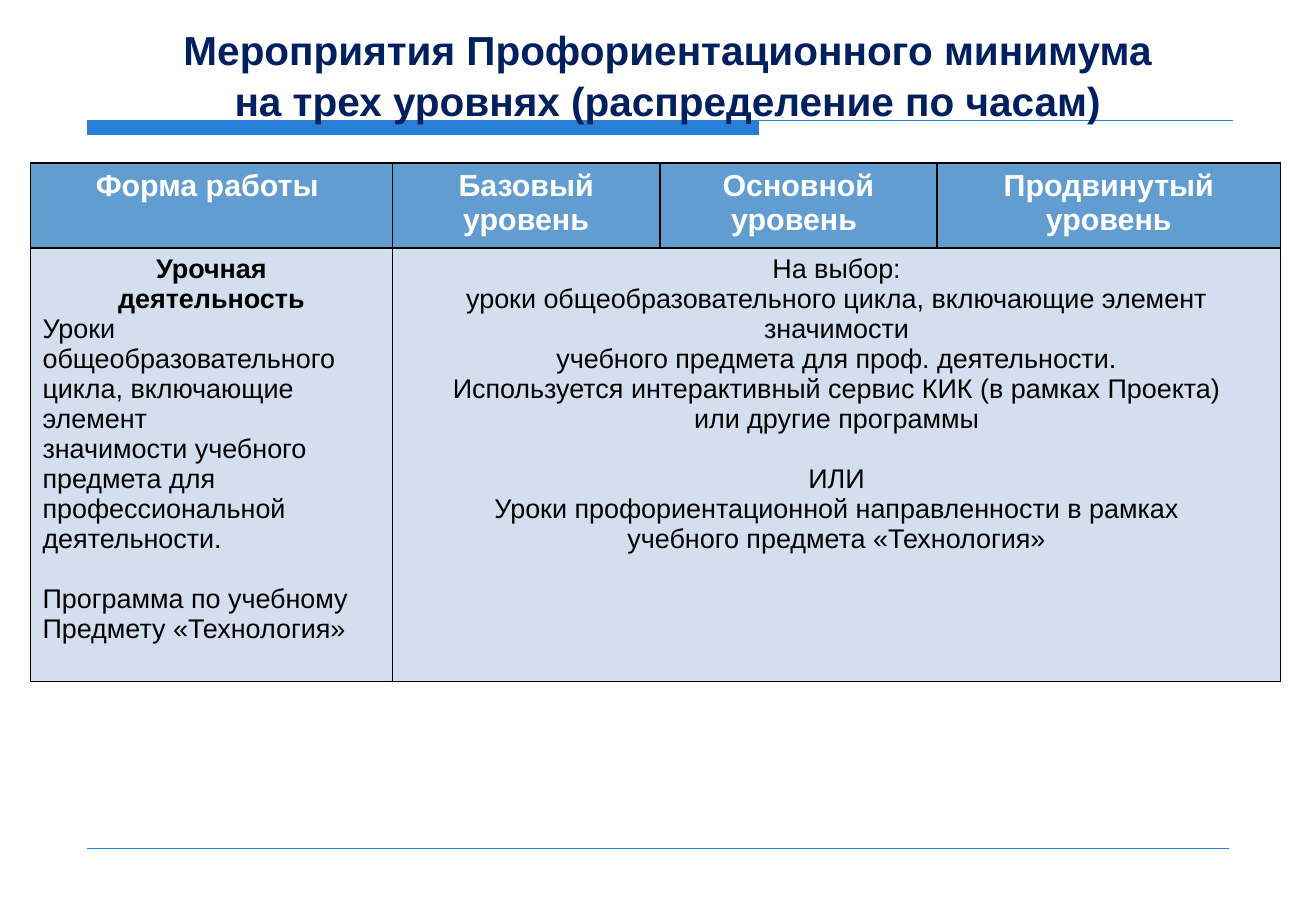
from lxml import etree
from pptx import Presentation
from pptx.dml.color import RGBColor
from pptx.enum.shapes import MSO_CONNECTOR
from pptx.enum.text import PP_ALIGN
from pptx.oxml import parse_xml
from pptx.oxml.ns import nsdecls, qn
from pptx.util import Inches, Pt

COLORS = {
    "accent": "297FD5",
    "title": "002060",
    "header": "629DD1",
    "body": "D3DFEE",
    "white": "FFFFFF",
    "black": "000000",
}


def write(frame, lines, size, color="black", bold_lines=0, centered_lines=0, gap_before=(), spacing=None):
    """Write one paragraph per line; the first bold_lines and centered_lines are formatted so."""
    frame.word_wrap = True
    for index, line in enumerate(lines):
        paragraph = frame.paragraphs[0] if index == 0 else frame.add_paragraph()
        paragraph.alignment = PP_ALIGN.CENTER if index < centered_lines else PP_ALIGN.LEFT
        paragraph.line_spacing = spacing
        if line in gap_before:
            paragraph.space_before = Pt(18)
        run = paragraph.add_run()
        run.text = line
        run.font.name = "Arial"
        run.font.size = Pt(size)
        run.font.bold = index < bold_lines
        run.font.color.rgb = RGBColor.from_string(COLORS[color])


def style_cell(cell, fill):
    cell.fill.solid()
    cell.fill.fore_color.rgb = RGBColor.from_string(COLORS[fill])
    properties = cell._tc.get_or_add_tcPr()
    for position, side in enumerate(("lnL", "lnR", "lnT", "lnB")):
        properties.insert(position, parse_xml(
            f'<a:{side} {nsdecls("a")} w="12700"><a:solidFill>'
            f'<a:srgbClr val="{COLORS["black"]}"/></a:solidFill></a:{side}>'))


presentation = Presentation()
presentation.slide_width = Inches(10.83)
presentation.slide_height = Inches(7.5)
slide = presentation.slides.add_slide(presentation.slide_layouts[6])
accent = RGBColor.from_string(COLORS["accent"])

# Title underline: a thick bar that continues as a thin line
left, top, bar_right, bar_bottom, line_right = map(Inches, (0.72, 0.99, 6.24, 1.11, 10.15))
builder = slide.shapes.build_freeform(left, top)
builder.add_line_segments([(bar_right, top), (bar_right, bar_bottom), (left, bar_bottom)], close=True)
builder.move_to(left, top)
builder.add_line_segments([(line_right, top)], close=False)
underline = builder.convert_to_shape()
underline.shadow.inherit = False
underline.fill.solid()
underline.fill.fore_color.rgb = accent
underline.line.color.rgb = accent
underline.line.width = Pt(0.75)

# Footer line
footer = slide.shapes.add_connector(
    MSO_CONNECTOR.STRAIGHT, Inches(0.72), Inches(6.98), Inches(10.11), Inches(6.98))
footer.line.color.rgb = accent
footer.line.width = Pt(0.25)
etree.SubElement(footer._element.spPr, qn("a:effectLst"))

# Title
title = slide.shapes.add_textbox(Inches(0.72), Inches(0.14), Inches(9.55), Inches(0.91))
write(title.text_frame,
      ["Мероприятия Профориентационного минимума",
       "на трех уровнях (распределение по часам)"],
      size=24, color="title", bold_lines=2, centered_lines=2, spacing=1.05)

# Table
column_widths = (2.98, 2.2, 2.28, 2.83)
row_heights = (0.7, 3.57)
table = slide.shapes.add_table(
    2, 4, Inches(0.25), Inches(1.34), Inches(sum(column_widths)), Inches(sum(row_heights))).table
for column, width in zip(table.columns, column_widths):
    column.width = Inches(width)
for row, height, fill in zip(table.rows, row_heights, ("header", "body")):
    row.height = Inches(height)
    for cell in row.cells:
        style_cell(cell, fill)
table.cell(1, 1).merge(table.cell(1, 3))

# Header row
headings = ("Форма работы ", "Базовый уровень", "Основной уровень ", "Продвинутый уровень")
for cell, heading in zip(table.rows[0].cells, headings):
    write(cell.text_frame, [heading], size=18, color="white", bold_lines=1, centered_lines=1)

# Body row
activity = [
    "Урочная",
    "деятельность",
    "Уроки общеобразовательного цикла, включающие элемент",
    "значимости учебного",
    "предмета для профессиональной деятельности.",
    "Программа по учебному",
    "Предмету «Технология»",
]
options = [
    "На выбор:",
    "уроки общеобразовательного цикла, включающие элемент значимости",
    "учебного предмета для проф. деятельности.",
    "Используется интерактивный сервис КИК (в рамках Проекта)",
    "или другие программы",
    "ИЛИ",
    "Уроки профориентационной направленности в рамках",
    "учебного предмета «Технология»",
]
write(table.cell(1, 0).text_frame, activity, size=16, bold_lines=2, centered_lines=2,
      gap_before=("Программа по учебному",))
write(table.cell(1, 1).text_frame, options, size=16, centered_lines=len(options),
      gap_before=("ИЛИ",))

presentation.save("out.pptx")
